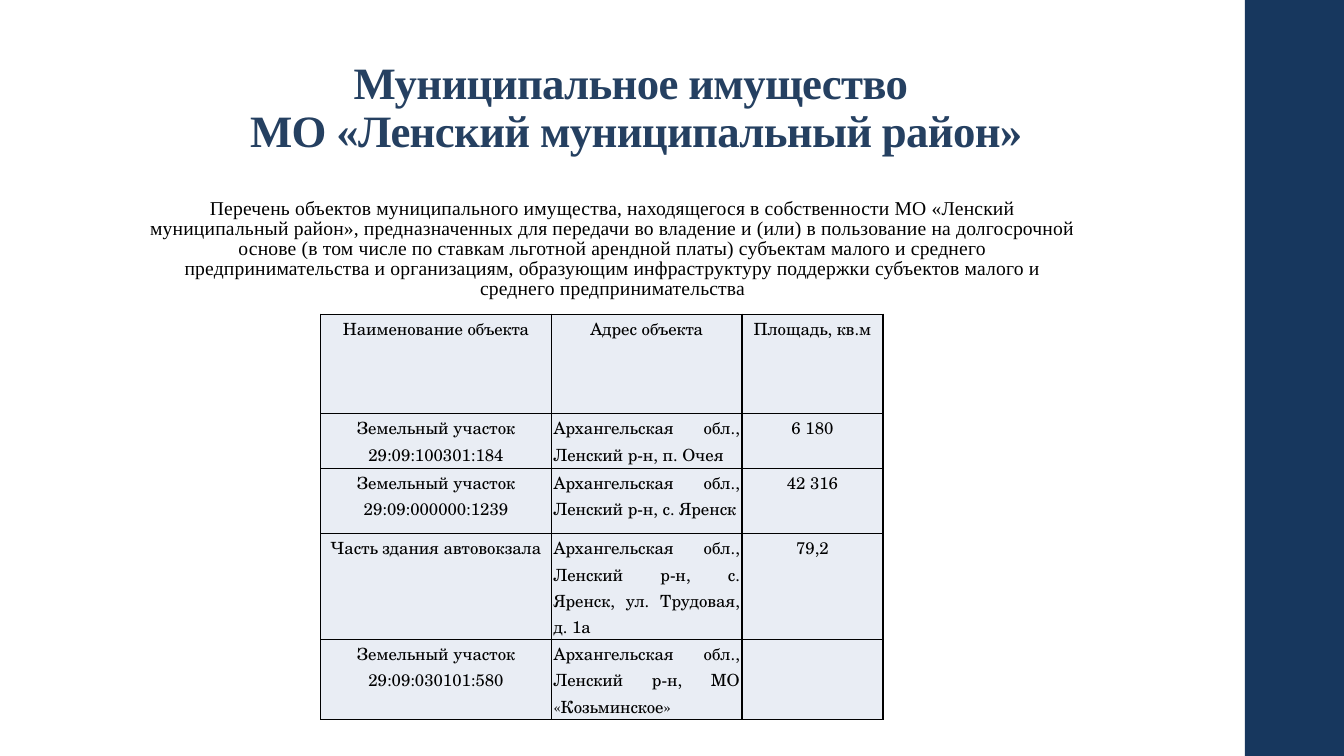
from dataclasses import dataclass

from lxml import etree
from pptx import Presentation, util as u
from pptx.dml.color import RGBColor
from pptx.enum import shapes, text
from pptx.oxml import ns


@dataclass(frozen=True)
class Theme:
    """Colours, fonts and type sizes of the slide."""
    band: str = "17375E"
    heading: str = "254061"
    ink: str = "000000"
    cell: str = "E9EDF4"
    serif: str = "Times New Roman"
    table_font: str = "TeX Gyre Schola"
    title_size: int = 32
    intro_size: int = 14
    table_size: int = 12
    border: float = 1


THEME = Theme()
CENTER = text.PP_ALIGN.CENTER
JUSTIFY = text.PP_ALIGN.JUSTIFY

TITLE = "Муниципальное имущество \vМО «Ленский муниципальный район»"
INTRO = (
    "Перечень объектов муниципального имущества, находящегося в собственности "
    "МО «Ленский муниципальный район», предназначенных для передачи во владение "
    "и (или) в пользование на долгосрочной основе (в том числе по ставкам льготной "
    "арендной платы) субъектам малого и среднего предпринимательства и организациям, "
    "образующим инфраструктуру поддержки субъектов малого и среднего "
    "предпринимательства"
)
HEADER = ("Наименование объекта", "Адрес объекта", "Площадь, кв.м")
OBJECTS = (
    ("Земельный участок 29:09:100301:184",
     "Архангельская обл., Ленский р-н, п. Очея", "6 180"),
    ("Земельный участок 29:09:000000:1239",
     "Архангельская обл., Ленский р-н, с. Яренск", "42 316"),
    ("Часть здания автовокзала",
     "Архангельская обл., Ленский р-н, с. Яренск, ул. Трудовая, д. 1а", "79,2"),
    ("Земельный участок 29:09:030101:580",
     "Архангельская обл., Ленский р-н, МО «Козьминское»", ""),
)
COLUMN_WIDTHS = (5.82, 4.8, 3.55)
ROW_HEIGHTS = (2.51, 1.37, 1.65, 2.67, 2.01)


def write(frame, words, *, size, font, color=THEME.ink, bold=False,
          align=CENTER, line=1.0, after=0, tracking=0):
    """Fill a text frame with one formatted paragraph."""
    paragraph = frame.paragraphs[0]
    paragraph.text = words
    paragraph.alignment = align
    paragraph.line_spacing = line
    paragraph.space_after = u.Pt(after)
    paragraph.font.size = u.Pt(size)
    for run in paragraph.runs:
        run.font.size = u.Pt(size)
        run.font.name = font
        run.font.bold = bold
        run.font.color.rgb = RGBColor.from_string(color)
        if tracking:
            run._r.get_or_add_rPr().set("spc", str(round(tracking * 100)))


def add_band(slide, box):
    """Draw the plain side band."""
    band = slide.shapes.add_shape(shapes.MSO_SHAPE.RECTANGLE, *map(u.Cm, box))
    band.shadow.inherit = False
    band.fill.solid()
    band.fill.fore_color.rgb = RGBColor.from_string(THEME.band)
    band.line.fill.background()


def add_text(slide, box, words, anchor, **text_format):
    """Place a wrapped text box."""
    frame = slide.shapes.add_textbox(*map(u.Cm, box)).text_frame
    frame.word_wrap = True
    frame.vertical_anchor = anchor
    write(frame, words, **text_format)


def add_borders(cell):
    """Outline all four sides of a cell."""
    properties = cell._tc.get_or_add_tcPr()
    for index, side in enumerate(("lnL", "lnR", "lnT", "lnB")):
        line = etree.Element(ns.qn(f"a:{side}"), w=str(u.Pt(THEME.border)))
        fill = etree.SubElement(line, ns.qn("a:solidFill"))
        etree.SubElement(fill, ns.qn("a:srgbClr"), val=THEME.ink)
        properties.insert(index, line)


def add_objects_table(slide, box):
    """Build the table of municipal objects."""
    rows = (HEADER, *OBJECTS)
    table = slide.shapes.add_table(len(rows), len(HEADER), *map(u.Cm, box)).table
    table.first_row = False
    table.horz_banding = False
    for column, width in zip(table.columns, COLUMN_WIDTHS):
        column.width = u.Cm(width)
    for row, height in zip(table.rows, ROW_HEIGHTS):
        row.height = u.Cm(height)
    for row_index, values in enumerate(rows):
        for column_index, value in enumerate(values):
            cell = table.cell(row_index, column_index)
            cell.margin_left = cell.margin_right = u.Cm(0.05)
            cell.margin_top = cell.margin_bottom = 0
            cell.fill.solid()
            cell.fill.fore_color.rgb = RGBColor.from_string(THEME.cell)
            add_borders(cell)
            is_address = row_index > 0 and column_index == 1
            write(cell.text_frame, value, size=THEME.table_size,
                  font=THEME.table_font, line=1.07, after=8,
                  align=JUSTIFY if is_address else CENTER)


def main():
    """Build and save the presentation."""
    presentation = Presentation()
    presentation.slide_width = u.Cm(33.87)
    presentation.slide_height = u.Cm(19.05)
    slide = presentation.slides.add_slide(presentation.slide_layouts[6])
    add_band(slide, (31.37, 0, 2.5, 19.05))
    add_text(slide, (1.63, 0.41, 28.8, 3.68), TITLE, text.MSO_ANCHOR.BOTTOM,
             size=THEME.title_size, font=THEME.serif, color=THEME.heading,
             bold=True, line=0.9, tracking=-0.5)
    add_text(slide, (3.5, 4.9, 23.88, 2.87), INTRO, text.MSO_ANCHOR.TOP,
             size=THEME.intro_size, font=THEME.serif, line=0.85, after=2,
             tracking=0.1)
    add_objects_table(slide, (8.08, 7.92, sum(COLUMN_WIDTHS), sum(ROW_HEIGHTS)))
    presentation.save("out.pptx")


if __name__ == "__main__":
    main()
